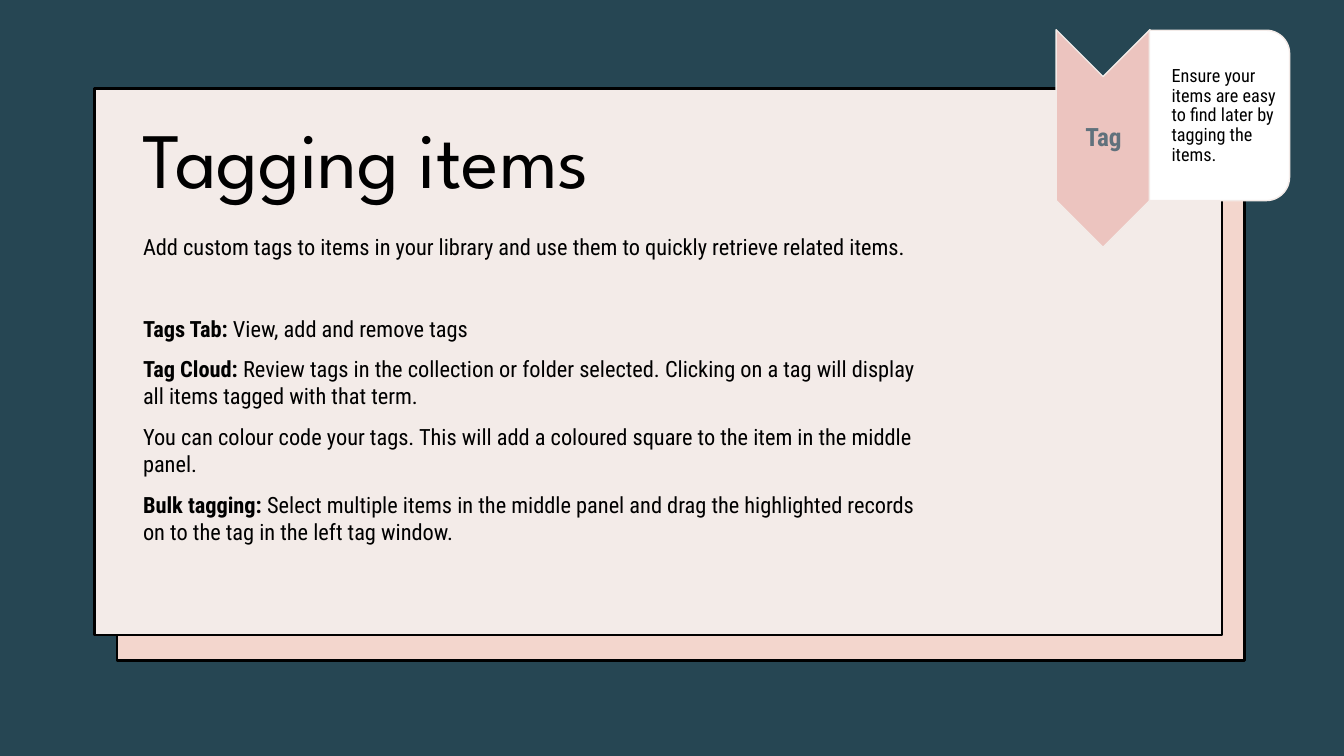
from pptx import Presentation
from pptx.dml.color import RGBColor
from pptx.enum import shapes, text
from pptx.util import Inches, Pt

TEAL = RGBColor(0x26, 0x46, 0x53)
PEACH = RGBColor(0xF3, 0xD6, 0xCD)
CREAM = RGBColor(0xF3, 0xEB, 0xE8)
PINK = RGBColor(0xEC, 0xC4, 0xBF)
SLATE = RGBColor(0x60, 0x71, 0x7C)
WHITE = RGBColor(0xFF, 0xFF, 0xFF)
BLACK = RGBColor(0, 0, 0)

TITLE_FONT = "League Spartan"
BODY_FONT = "Roboto Condensed"
BLANK_LAYOUT = 6

BODY = [
    ("", "Add custom tags to items in your library and use them to quickly "
         "retrieve related items.", 0),
    ("Tags Tab: ", "View, add and remove tags", 39.3),
    ("Tag Cloud: ", "Review tags in the collection or folder selected. Clicking on "
                    "a tag will display all items tagged with that term.", 10),
    ("", "You can colour code your tags. This will add a coloured square to the "
         "item in the middle panel.", 10),
    ("Bulk tagging: ", "Select multiple items in the middle panel and drag the "
                       "highlighted records on to the tag in the left tag window.", 10),
]


def set_attributes(target, values):
    for name, value in values.items():
        setattr(target, name, value)


def add_panel(slide, kind, box, fill, line, width, rotation=0):
    shape = slide.shapes.add_shape(kind, *map(Inches, box))
    shape.shadow.inherit = False
    shape.rotation = rotation
    shape.fill.solid()
    shape.fill.fore_color.rgb = fill
    shape.line.color.rgb = line
    shape.line.width = Pt(width)


def add_text_frame(slide, box, **frame_format):
    frame = slide.shapes.add_textbox(*map(Inches, box)).text_frame
    set_attributes(frame, {"word_wrap": True, **frame_format})
    return frame


def add_run(paragraph, words, size, color=BLACK, font=BODY_FONT, bold=False):
    run = paragraph.add_run()
    run.text = words
    set_attributes(run.font, {"name": font, "size": Pt(size), "bold": bold})
    run.font.color.rgb = color


def add_label(slide, box, words, frame_format, paragraph_format, **run_format):
    paragraph = add_text_frame(slide, box, **frame_format).paragraphs[0]
    set_attributes(paragraph, {"line_spacing": 0.9, **paragraph_format})
    add_run(paragraph, words, **run_format)


def add_body(slide, box):
    frame = add_text_frame(slide, box)
    for index, (lead, words, space) in enumerate(BODY):
        paragraph = frame.add_paragraph() if index else frame.paragraphs[0]
        paragraph.space_before = Pt(space)
        if lead:
            add_run(paragraph, lead, 16, bold=True)
        add_run(paragraph, words, 16)


def add_tag_callout(slide):
    kinds = shapes.MSO_SHAPE
    margin = Inches(0.01)
    middle = {"vertical_anchor": text.MSO_ANCHOR.MIDDLE, "margin_left": margin,
              "margin_right": margin, "margin_top": margin, "margin_bottom": margin}
    add_panel(slide, kinds.CHEVRON, (9.86, 0.91, 2.16, 0.93), PINK, CREAM, 1, 90)
    add_label(slide, (10.48, 0.76, 0.93, 1.23), "Tag", middle,
              {"alignment": text.PP_ALIGN.CENTER}, size=18, color=SLATE, bold=True)
    add_panel(slide, kinds.ROUND_2_SAME_RECTANGLE, (11.25, 0.45, 1.69, 1.39),
              WHITE, CREAM, 1, 90)
    add_label(slide, (11.4, 0.37, 1.32, 1.56),
              "Ensure your items are easy to find later by tagging the items.",
              {**middle, "margin_left": Inches(0.22)}, {}, size=13)


def main():
    presentation = Presentation()
    set_attributes(presentation, {"slide_width": Inches(13.33),
                                  "slide_height": Inches(7.5)})
    slide = presentation.slides.add_slide(presentation.slide_layouts[BLANK_LAYOUT])
    slide.background.fill.solid()
    slide.background.fill.fore_color.rgb = TEAL

    rectangle = shapes.MSO_SHAPE.RECTANGLE
    add_panel(slide, rectangle, (1.16, 1.27, 11.18, 5.28), PEACH, BLACK, 2)
    add_panel(slide, rectangle, (0.94, 0.88, 11.18, 5.42), CREAM, BLACK, 2)
    add_label(slide, (1.32, 1.15, 7.23, 1.87), "Tagging items", {}, {},
              size=56, font=TITLE_FONT)
    add_body(slide, (1.32, 2.26, 7.92, 2.99))
    add_tag_callout(slide)
    presentation.save("out.pptx")


if __name__ == "__main__":
    main()
